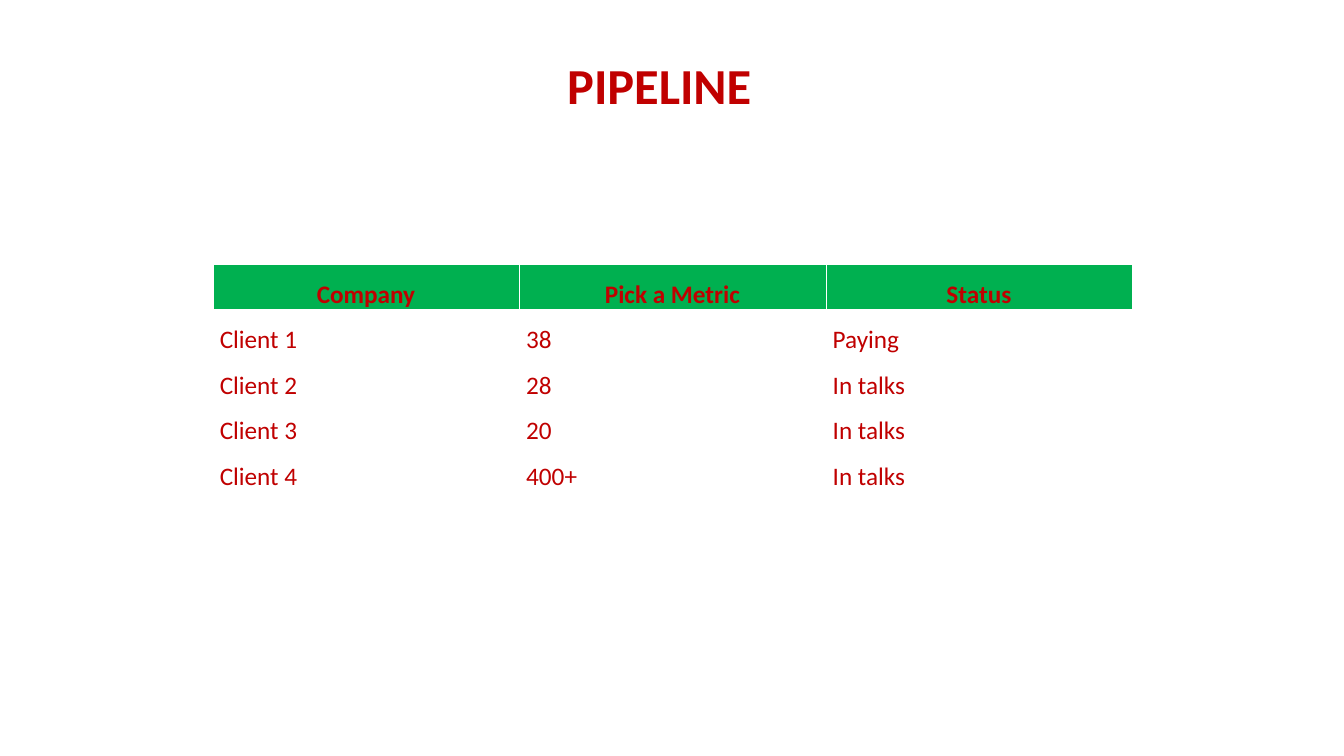
"""Builds the client pipeline slide."""
from lxml import etree
from pptx import Presentation
from pptx import util as u
from pptx.dml import color
from pptx.enum import text
from pptx.oxml import ns


def paint(hex_color):
    return color.RGBColor.from_string(hex_color)


def write(frame, words, font="Calibri", size=18, ink="C00000", bold=False,
          align=text.PP_ALIGN.LEFT, spacing=1.0):
    para = frame.paragraphs[0]
    para.alignment = align
    para.line_spacing = spacing
    span = para.add_run()
    span.text = words
    span.font.name = font
    span.font.size = u.Pt(size)
    span.font.bold = bold
    span.font.color.rgb = paint(ink)


class PipelinePage:
    header_fill = "00B050"
    border = "FFFFFF"
    border_width = u.Pt(0.25)

    def __init__(self, deck):
        self.page = deck.slides.add_slide(deck.slide_layouts[6])

    def title(self, words, left, top, width, height):
        box = self.page.shapes.add_textbox(*map(u.Inches, (left, top, width, height)))
        box.text_frame.word_wrap = True
        write(box.text_frame, words, size=36, bold=True, align=text.PP_ALIGN.CENTER)

    def table(self, rows, left, top, width, row_height):
        height = row_height * len(rows)
        frame = self.page.shapes.add_table(
            len(rows), len(rows[0]), *map(u.Inches, (left, top, width, height)))
        grid = frame.table
        grid.horz_banding = False
        for row_index, row in enumerate(rows):
            for column_index, words in enumerate(row):
                self.cell(grid.cell(row_index, column_index), words, row_index == 0)

    def cell(self, cell, words, is_header):
        cell.margin_left = cell.margin_right = u.Inches(0.07)
        cell.margin_top = cell.margin_bottom = 0
        if is_header:
            cell.vertical_anchor = text.MSO_ANCHOR.MIDDLE
            cell.fill.solid()
            cell.fill.fore_color.rgb = paint(self.header_fill)
        else:
            cell.vertical_anchor = text.MSO_ANCHOR.BOTTOM
            cell.fill.background()
        align = text.PP_ALIGN.CENTER if is_header else text.PP_ALIGN.LEFT
        write(cell.text_frame, words, bold=is_header, align=align, spacing=1.5)
        self.borders(cell)

    def borders(self, cell):
        properties = cell._tc.get_or_add_tcPr()
        for position, side in enumerate("LRTB"):
            line = etree.Element(ns.qn(f"a:ln{side}"), w=str(self.border_width))
            fill = etree.SubElement(line, ns.qn("a:solidFill"))
            etree.SubElement(fill, ns.qn("a:srgbClr"), val=self.border)
            properties.insert(position, line)


def main():
    deck = Presentation()
    deck.slide_width = u.Inches(13.33)
    deck.slide_height = u.Inches(7.5)
    pipeline = PipelinePage(deck)
    pipeline.title("PIPELINE", 3.64, 0.49, 5.8, 0.71)
    clients = [
        ("Company", "Pick a Metric", "Status"),
        ("Client 1", "38", "Paying"),
        ("Client 2", "28", "In talks"),
        ("Client 3", "20", "In talks"),
        ("Client 4", "400+", "In talks"),
    ]
    pipeline.table(clients, 2.11, 2.62, 9.12, 0.45)
    deck.save("out.pptx")


if __name__ == "__main__":
    main()
